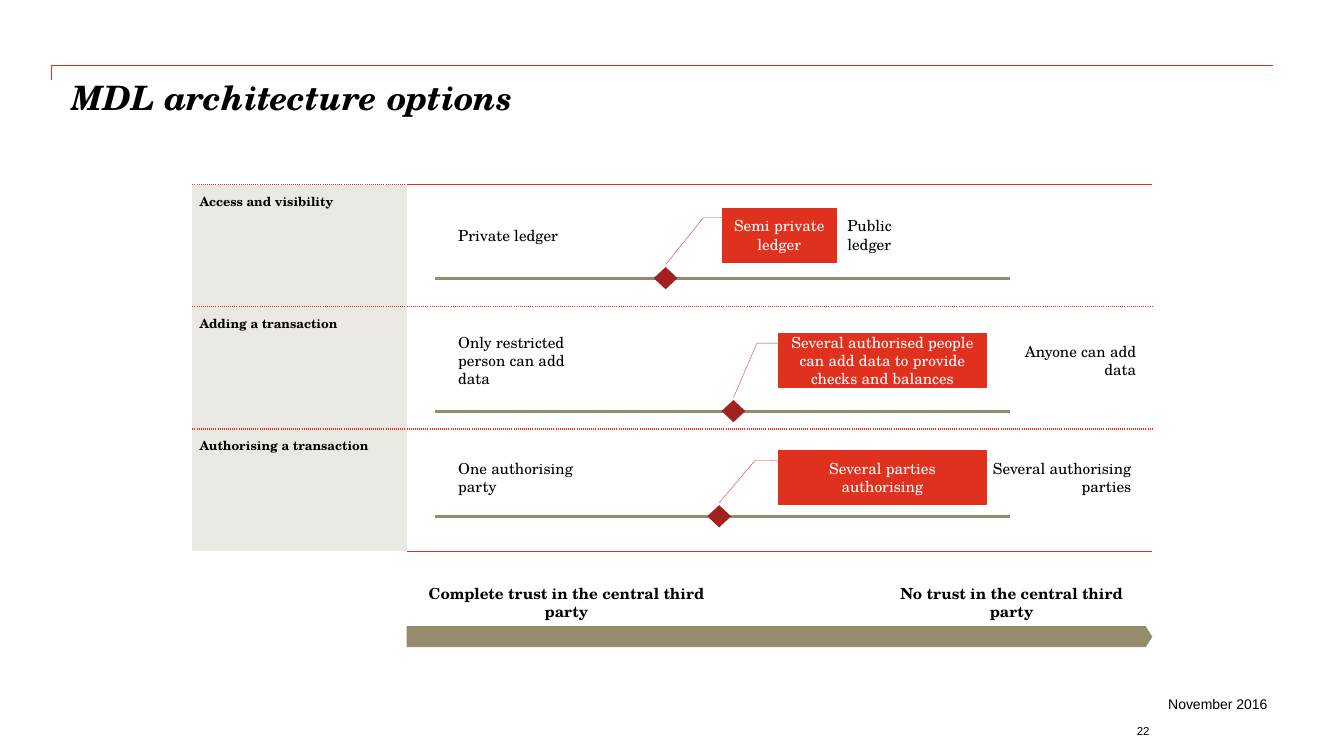
from dataclasses import dataclass

from lxml import etree
from pptx import Presentation
from pptx import util as u
from pptx.dml.color import RGBColor
from pptx.enum import shapes, text
from pptx.oxml import ns


@dataclass(frozen=True)
class Theme:
    red: str = "E0301E"
    marker: str = "A32020"
    stone: str = "968C6D"
    panel: str = "EAE8E2"
    black: str = "000000"
    white: str = "FFFFFF"
    serif: str = "TeX Gyre Schola"
    sans: str = "Arial"
    title: float = 24
    body: float = 10.9
    heading: float = 9
    date: float = 10
    number: float = 8.2


@dataclass(frozen=True)
class Box:
    left: float
    top: float
    width: float
    height: float

    def inner(self, left, top, width, height):
        return Box(self.left + left, self.top + top, width, height)

    def lengths(self):
        return [u.Cm(v) for v in (self.left, self.top, self.width, self.height)]


@dataclass(frozen=True)
class Option:
    heading: str
    low: str
    choice: str
    high: str
    middle: float
    track: float
    marker: float
    choice_left: float
    choice_width: float
    elbow: float
    high_left: float
    high_width: float
    high_align: text.PP_ALIGN


THEME = Theme()
LEFT, CENTER, RIGHT = text.PP_ALIGN.LEFT, text.PP_ALIGN.CENTER, text.PP_ALIGN.RIGHT
TOP, MIDDLE = text.MSO_ANCHOR.TOP, text.MSO_ANCHOR.MIDDLE
HEADING_WIDTH = 5.4
LABEL_HEIGHT = 1.35
NO_TABLE_STYLE = "{2D5ABB26-0587-4C30-8999-92F81FD0307C}"

OPTIONS = [
    Option("Access and visibility", "Private ledger", "Semi private ledger",
           "Public ledger", 1.27, 2.36, 6.53, 7.96, 2.87, 0.48, 11.11, 2.24, LEFT),
    Option("Adding a transaction", "Only restricted person can add data",
           "Several authorised people can add data to provide checks and balances",
           "Anyone can add data", 1.35, 2.63, 8.24, 9.38, 5.23, 0.55, 14.81, 3.58, RIGHT),
    Option("Authorising a transaction", "One authorising party",
           "Several parties authorising", "Several authorising parties",
           1.22, 2.2, 7.88, 9.38, 5.23, 0.59, 14.77, 3.5, RIGHT),
]


def write(frame, wording, size, color=THEME.black, font=THEME.serif, align=LEFT,
          anchor=MIDDLE, bold=False, italic=False, insets=(0, 0)):
    frame.word_wrap = True
    frame.auto_size = text.MSO_AUTO_SIZE.NONE
    frame.vertical_anchor = anchor
    frame.margin_left = frame.margin_right = u.Cm(insets[0])
    frame.margin_top = frame.margin_bottom = u.Cm(insets[1])
    add_span(frame.paragraphs[0], wording, size, color, font, align, bold, italic)


def add_span(para, wording, size, color, font, align, bold, italic):
    para.alignment = align
    span = para.add_run()
    span.text = wording
    span.font.name = font
    span.font.size = u.Pt(size)
    span.font.bold = bold
    span.font.italic = italic
    span.font.color.rgb = RGBColor.from_string(color)


def add_label(page, box, wording, size=THEME.body, **style):
    label = page.shapes.add_textbox(*box.lengths())
    write(label.text_frame, wording, size, **style)


def add_block(page, preset, box, color):
    block = page.shapes.add_shape(preset, *box.lengths())
    block.shadow.inherit = False
    block.fill.solid()
    block.fill.fore_color.rgb = RGBColor.from_string(color)
    block.line.fill.background()
    return block


def add_line(page, kind, start, end, color, width):
    line = page.shapes.add_connector(kind, *[u.Cm(v) for v in (*start, *end)])
    line.line.color.rgb = RGBColor.from_string(color)
    line.line.width = u.Pt(width)
    etree.SubElement(line._element.spPr, ns.qn("a:effectLst"))
    return line


def set_border(cell, index, side, dash):
    border = etree.Element(ns.qn(f"a:{side}"), w=str(u.Pt(1)))
    fill = etree.SubElement(border, ns.qn("a:solidFill"))
    etree.SubElement(fill, ns.qn("a:srgbClr"), val=THEME.red)
    etree.SubElement(border, ns.qn("a:prstDash"), val=dash)
    cell._tc.get_or_add_tcPr().insert(index, border)


def build_header(page, box):
    rule = add_line(page, shapes.MSO_CONNECTOR.ELBOW, (box.left, box.top + 0.36),
                    (box.left + box.width, box.top), THEME.red, 1)
    guides = rule._element.spPr.find(ns.qn("a:prstGeom")).get_or_add_avLst()
    etree.SubElement(guides, ns.qn("a:gd"), name="adj1", fmla="val 0")
    title = page.shapes.title
    title.left, title.top, title.width, title.height = box.inner(0.5, 0.28, 30.35, 2.24).lengths()
    write(title.text_frame, "MDL architecture options", THEME.title,
          anchor=TOP, bold=True, italic=True)


def build_table(page, box):
    frame = page.shapes.add_table(len(OPTIONS), 2, *box.lengths())
    table = frame.table
    table.first_row = table.horz_banding = False
    table._tbl.tblPr.find(ns.qn("a:tableStyleId")).text = NO_TABLE_STYLE
    table.columns[0].width = u.Cm(HEADING_WIDTH)
    table.columns[1].width = u.Cm(box.width - HEADING_WIDTH)
    last = len(OPTIONS) - 1
    for index, option in enumerate(OPTIONS):
        heading, scale = table.cell(index, 0), table.cell(index, 1)
        heading.fill.solid()
        heading.fill.fore_color.rgb = RGBColor.from_string(THEME.panel)
        scale.fill.background()
        heading.margin_left = heading.margin_right = u.Cm(0.18)
        heading.margin_top = heading.margin_bottom = u.Cm(0.18)
        add_span(heading.text_frame.paragraphs[0], option.heading, THEME.heading,
                 THEME.black, THEME.serif, LEFT, True, False)
        set_border(heading, 0, "lnT", "sysDot")
        set_border(scale, 0, "lnT", "sysDot" if index else "solid")
        if index < last:
            set_border(heading, 1, "lnB", "sysDot")
        set_border(scale, 1, "lnB", "sysDot" if index < last else "solid")


def build_scale(page, box, option):
    track = box.inner(0.72, option.track, 14.48, 0)
    add_line(page, shapes.MSO_CONNECTOR.STRAIGHT, (track.left, track.top),
             (track.left + track.width, track.top), THEME.stone, 2)
    top = option.middle - LABEL_HEIGHT / 2
    add_label(page, box.inner(1.3, top, 3.2, LABEL_HEIGHT), option.low)
    add_label(page, box.inner(option.high_left, top, option.high_width, LABEL_HEIGHT),
              option.high, align=option.high_align)
    add_block(page, shapes.MSO_SHAPE.DIAMOND,
              box.inner(option.marker - 0.3, option.track - 0.28, 0.6, 0.56), THEME.marker)

    choice = add_block(page, shapes.MSO_SHAPE.LINE_CALLOUT_2,
                       box.inner(option.choice_left, top, option.choice_width, LABEL_HEIGHT),
                       THEME.red)
    choice.line.color.rgb = RGBColor.from_string(THEME.red)
    choice.line.width = u.Pt(0.25)
    tip_x = (option.marker - option.choice_left) / option.choice_width
    tip_y = (option.track - 0.34 - top) / LABEL_HEIGHT
    leader = (0.18, 0, 0.18, -option.elbow / option.choice_width, tip_y, tip_x)
    for index, value in enumerate(leader):
        choice.adjustments[index] = value
    write(choice.text_frame, option.choice, THEME.body, color=THEME.white,
          align=CENTER, insets=(0.25, 0.13))


def build_trust_arrow(page, box):
    for left, width, wording in ((0.13, 7.8, "Complete trust in the central third party"),
                                 (12, 6.5, "No trust in the central third party")):
        add_label(page, box.inner(left, 0, width, 1.14), wording, align=CENTER, bold=True)
    arrow = add_block(page, shapes.MSO_SHAPE.PENTAGON,
                      box.inner(0, 1.17, box.width, 0.53), THEME.stone)
    arrow.adjustments[0] = 0.32


def build_footer(page, box):
    add_label(page, box.inner(box.width - 3.6, 0, 3.6, 1), "November 2016", THEME.date,
              font=THEME.sans, align=RIGHT, anchor=TOP)
    add_label(page, box.inner(0, 0.71, 4.5, 0.38), "22", THEME.number,
              font=THEME.sans, align=RIGHT)


def build_options_page(deck):
    page = deck.slides.add_slide(deck.slide_layouts[5])
    table = Box(4.85, 4.65, 24.2, 9.24)
    row_height = table.height / len(OPTIONS)
    scale_width = table.width - HEADING_WIDTH
    build_header(page, Box(1.3, 1.65, 30.78, 2.6))
    build_table(page, table)
    for index, option in enumerate(OPTIONS):
        build_scale(page, table.inner(HEADING_WIDTH, index * row_height,
                                      scale_width, row_height), option)
    build_trust_arrow(page, table.inner(HEADING_WIDTH, 9.96, scale_width, 1.7))
    build_footer(page, Box(24.48, 17.53, 7.47, 1.1))


def main():
    deck = Presentation()
    deck.slide_width, deck.slide_height = u.Cm(33.88), u.Cm(19.05)
    build_options_page(deck)
    deck.save("out.pptx")


if __name__ == "__main__":
    main()
